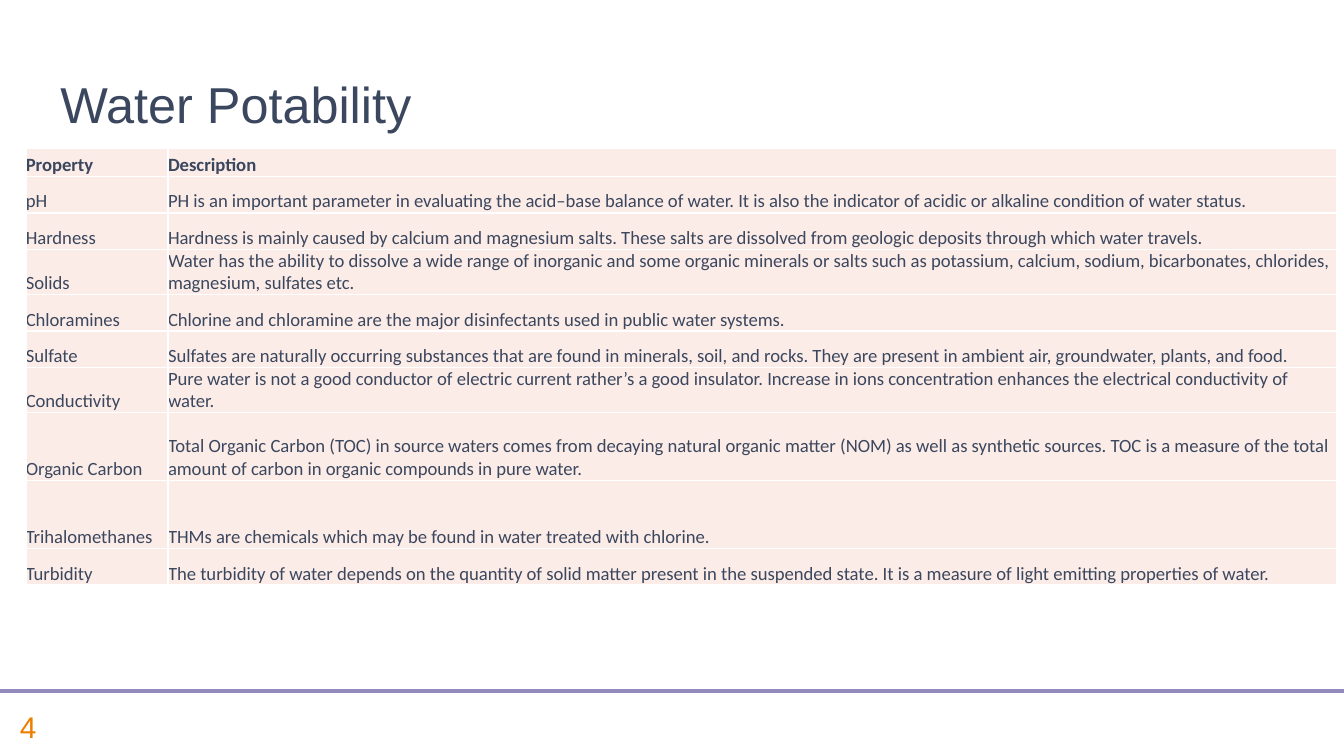
from lxml import etree
from pptx import Presentation
from pptx.dml.color import RGBColor
from pptx.enum.shapes import MSO_CONNECTOR
from pptx.enum.text import MSO_ANCHOR, MSO_AUTO_SIZE, PP_ALIGN
from pptx.oxml.ns import qn
from pptx.util import Pt

LINE = MSO_CONNECTOR.STRAIGHT
MIDDLE = MSO_ANCHOR.MIDDLE
BOTTOM = MSO_ANCHOR.BOTTOM
LEFT = PP_ALIGN.LEFT
FIXED = MSO_AUTO_SIZE.NONE

INK = "3B475E"
ROWS = [
    (15, "Property", "Description"),
    (19.6, "pH", "PH is an important parameter in evaluating the acid–base balance of water. It is also the indicator of acidic or alkaline condition of water status."),
    (19.6, "Hardness", "Hardness is mainly caused by calcium and magnesium salts. These salts are dissolved from geologic deposits through which water travels."),
    (19.6, "Solids", "Water has the ability to dissolve a wide range of inorganic and some organic minerals or salts such as potassium, calcium, sodium, bicarbonates, chlorides, magnesium, sulfates etc."),
    (19.6, "Chloramines", "Chlorine and chloramine are the major disinfectants used in public water systems."),
    (19.6, "Sulfate", "Sulfates are naturally occurring substances that are found in minerals, soil, and rocks. They are present in ambient air, groundwater, plants, and food."),
    (19.6, "Conductivity", "Pure water is not a good conductor of electric current rather’s a good insulator. Increase in ions concentration enhances the electrical conductivity of water."),
    (36.5, "Organic Carbon", "Total Organic Carbon (TOC) in source waters comes from decaying natural organic matter (NOM) as well as synthetic sources. TOC is a measure of the total amount of carbon in organic compounds in pure water."),
    (36.5, "Trihalomethanes", "THMs are chemicals which may be found in water treated with chlorine."),
    (19.6, "Turbidity", "The turbidity of water depends on the quantity of solid matter present in the suspended state. It is a measure of light emitting properties of water."),
]


def color(code):
    return RGBColor.from_string(code)


def style(par, face, size, code, bold=False):
    par.alignment = LEFT
    par.font.name = face
    par.font.size = Pt(size)
    par.font.bold = bold
    par.font.color.rgb = color(code)


deck = Presentation()
deck.slide_width = Pt(720)
deck.slide_height = Pt(405)
slide = deck.slides.add_slide(deck.slide_layouts[5])

box = slide.shapes.add_textbox(Pt(3.6), Pt(373.5), Pt(52.5), Pt(31.5))
frame = box.text_frame
frame.word_wrap = True
frame.vertical_anchor = MIDDLE
frame.text = "4"
style(frame.paragraphs[0], "Arial", 16, "ED7F00")

rule = slide.shapes.add_connector(LINE, Pt(0), Pt(370), Pt(720), Pt(370))
rule.line.color.rgb = color("928ABD")
rule.line.width = Pt(2.25)
etree.SubElement(rule._element.spPr, qn("a:effectLst"))

title = slide.shapes.title
title.left, title.top = Pt(25.2), Pt(21)
title.width, title.height = Pt(551.5), Pt(54)
frame = title.text_frame
frame.text = "Water Potability"
frame.auto_size = FIXED
frame.vertical_anchor = BOTTOM
style(frame.paragraphs[0], "Arial", 27, INK)

high = sum(row[0] for row in ROWS)
table = slide.shapes.add_table(
    len(ROWS), 2, Pt(13.8), Pt(79.5), Pt(702.5), Pt(high)).table
table.columns[0].width = Pt(76.2)
table.columns[1].width = Pt(626.3)
for r, (tall, *texts) in enumerate(ROWS):
    table.rows[r].height = Pt(tall)
    for c, text in enumerate(texts):
        cell = table.cell(r, c)
        cell.margin_left = cell.margin_right = Pt(0)
        cell.margin_top = cell.margin_bottom = Pt(0)
        cell.vertical_anchor = BOTTOM
        props = cell._tc.get_or_add_tcPr()
        for side in "LRTB":
            edge = etree.SubElement(props, qn(f"a:ln{side}"), w=str(Pt(1)))
            fill = etree.SubElement(edge, qn("a:solidFill"))
            etree.SubElement(fill, qn("a:srgbClr"), val="FFFFFF")
        cell.fill.solid()
        cell.fill.fore_color.rgb = color("FCECE7")
        cell.text = text
        style(cell.text_frame.paragraphs[0], "Calibri", 10, INK, r == 0)

deck.save("out.pptx")
